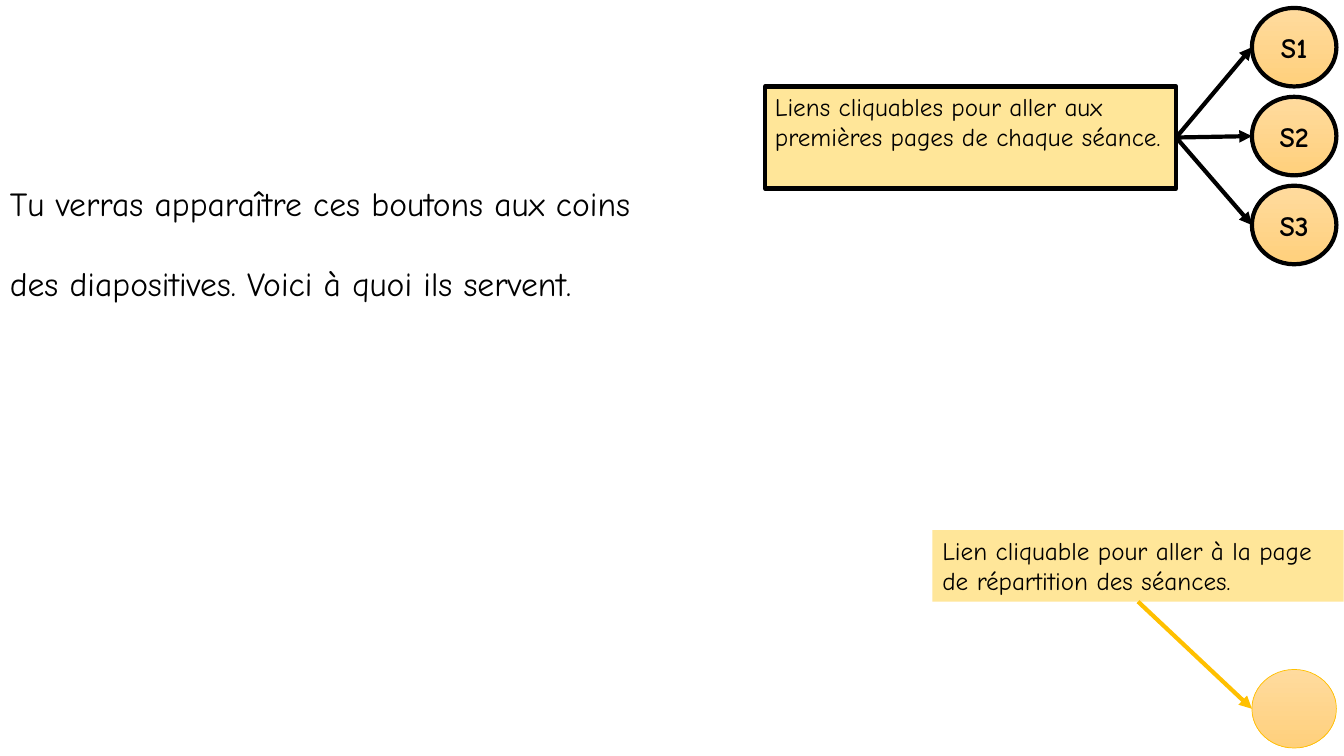
from dataclasses import dataclass

from lxml import etree
from pptx import Presentation
from pptx.dml.color import RGBColor
from pptx.enum.shapes import MSO_CONNECTOR, MSO_SHAPE
from pptx.enum.text import MSO_ANCHOR, PP_ALIGN
from pptx.oxml.ns import qn
from pptx.util import Cm, Pt

STRAIGHT = MSO_CONNECTOR.STRAIGHT
OVAL, RECTANGLE = MSO_SHAPE.OVAL, MSO_SHAPE.RECTANGLE
TOP, MIDDLE, BOTTOM = MSO_ANCHOR.TOP, MSO_ANCHOR.MIDDLE, MSO_ANCHOR.BOTTOM
LEFT, CENTER = PP_ALIGN.LEFT, PP_ALIGN.CENTER

FONT = "Comic Neue"
BLACK, GOLD, CREAM = "000000", "FFC000", "FFE699"
BUTTON_GRADIENT = ("FFDB9E", "FFD07C")
BUTTON_LEFT, BUTTON_WIDTH, BUTTON_HEIGHT = 31.55, 2.13, 1.98
FIRST_BUTTON_TOP, BUTTON_STEP = 0.2, 2.24
NOTE_WIDTH = 10.36
BOTTOM_SIDE, RIGHT_SIDE = 2, 3


@dataclass
class Button:
    label: str
    top: float
    line_color: str
    line_width: float


@dataclass
class Note:
    text: str
    left: float
    top: float
    height: float
    line_color: str | None
    arrow_color: str
    arrow_side: int
    buttons: list[Button]


NOTES = [
    Note("Liens cliquables pour aller aux premières pages de chaque séance.",
         19.28, 2.18, 2.57, BLACK, BLACK, RIGHT_SIDE,
         [Button(f"S{number + 1}", FIRST_BUTTON_TOP + number * BUTTON_STEP, BLACK, 3)
          for number in range(3)]),
    Note("Lien cliquable pour aller à la page de répartition des séances.",
         23.5, 13.36, 1.8, None, GOLD, BOTTOM_SIDE,
         [Button("", 16.87, GOLD, 0.5)]),
]


def color(value: str) -> RGBColor:
    return RGBColor.from_string(value)


def write(shape, text: str, size: float, anchor=TOP, align=LEFT,
          bold: bool = False, spacing: float = 1) -> None:
    frame = shape.text_frame
    frame.word_wrap = True
    frame.vertical_anchor = anchor
    frame.text = text
    for paragraph in frame.paragraphs:
        paragraph.alignment = align
        paragraph.line_spacing = spacing
        for span in paragraph.runs:
            span.font.name = FONT
            span.font.size = Pt(size)
            span.font.bold = bold
            span.font.color.rgb = color(BLACK)


def set_line(line, line_color: str, width: float) -> None:
    line.color.rgb = color(line_color)
    line.width = Pt(width)


def add_button(page, button: Button) -> None:
    circle = page.shapes.add_shape(OVAL, Cm(BUTTON_LEFT), Cm(button.top),
                                   Cm(BUTTON_WIDTH), Cm(BUTTON_HEIGHT))
    circle.shadow.inherit = False
    circle.fill.gradient()
    circle.fill.gradient_angle = 270
    for stop, value in zip(circle.fill.gradient_stops, BUTTON_GRADIENT):
        stop.color.rgb = color(value)
    set_line(circle.line, button.line_color, button.line_width)
    if button.label:
        write(circle, button.label, 20, MIDDLE, CENTER, bold=True)


def add_note(page, note: Note):
    box = page.shapes.add_shape(RECTANGLE, Cm(note.left), Cm(note.top),
                                Cm(NOTE_WIDTH), Cm(note.height))
    box.shadow.inherit = False
    box.fill.solid()
    box.fill.fore_color.rgb = color(CREAM)
    if note.line_color:
        set_line(box.line, note.line_color, 3)
    else:
        box.line.fill.background()
    write(box, note.text, 18)
    return box


def add_arrow(page, box, note: Note, button: Button) -> None:
    end_x, end_y = Cm(BUTTON_LEFT), Cm(button.top + BUTTON_HEIGHT / 2)
    arrow = page.shapes.add_connector(STRAIGHT, box.left, box.top, end_x, end_y)
    arrow.begin_connect(box, note.arrow_side)
    set_line(arrow.line, note.arrow_color, 3)
    properties = arrow._element.spPr
    etree.SubElement(properties.find(qn("a:ln")), qn("a:tailEnd"), type="triangle")
    etree.SubElement(properties, qn("a:effectLst"))


def main() -> None:
    deck = Presentation()
    deck.slide_width, deck.slide_height = Cm(33.87), Cm(19.05)
    page = deck.slides.add_slide(deck.slide_layouts[6])

    title = page.shapes.add_textbox(Cm(0), Cm(2.18), Cm(16.54), Cm(5.59))
    write(title, "Tu verras apparaître ces boutons aux coins des diapositives. "
          "Voici à quoi ils servent.", 24, BOTTOM, spacing=2)

    for note in NOTES:
        box = add_note(page, note)
        for button in note.buttons:
            add_button(page, button)
            add_arrow(page, box, note, button)

    deck.save("out.pptx")


if __name__ == "__main__":
    main()
